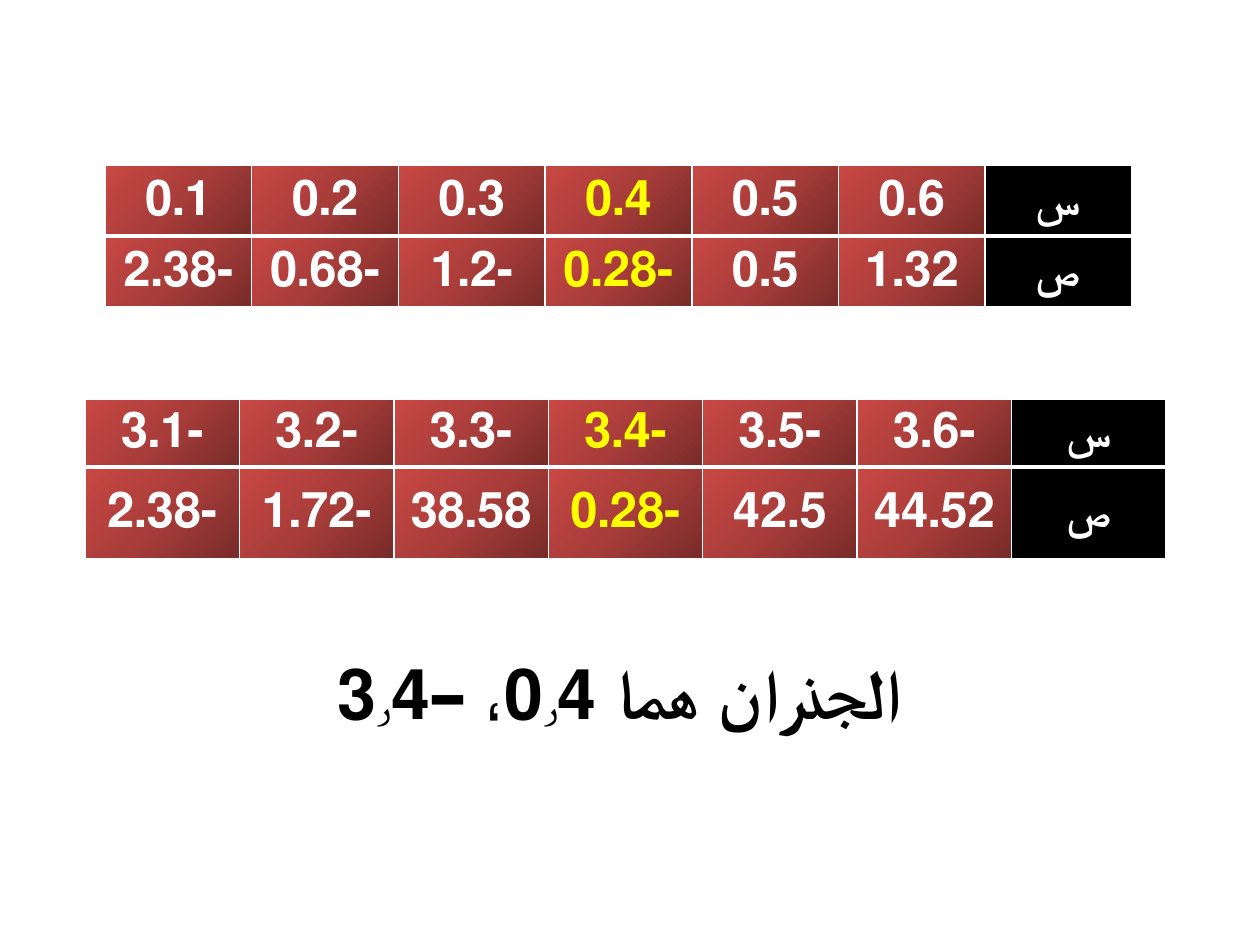
from lxml.etree import SubElement
from pptx import Presentation
from pptx.dml.color import RGBColor
from pptx.enum.text import MSO_ANCHOR, PP_ALIGN
from pptx.oxml.ns import qn
from pptx.util import Pt

PX = 914400 // 126
FONT = "Arial"
COLORS = {
    "text": "000000", "label": "000000", "value": "FFFFFF", "root": "FFFF00",
    "border": "FFFFFF", "dark": "772B29", "middle": "A93D3A", "light": "C94844",
}

# Content: values of x and y around each root, label in the last column
ROOT_COLUMN = 3
TABLES = [
    {"box": (105, 165, 1027), "row_heights": (71, 71), "inset": 6, "rows": [
        ("0.1", "0.2", "0.3", "0.4", "0.5", "0.6", "س"),
        ("-2.38", "-0.68", "-1.2", "-0.28", "0.5", "1.32", "ص"),
    ]},
    {"box": (85, 399, 1081), "row_heights": (68, 92), "inset": 5, "rows": [
        ("-3.1", "-3.2", "-3.3", "-3.4", "-3.5", "-3.6", "س"),
        ("-2.38", "-1.72", "38.58", "-0.28", "42.5", "44.52", "ص"),
    ]},
]
CONCLUSION = ["الجذران هما 0", "٫", "4، –3", "٫", "4"]
CONCLUSION_BOX = (164, 643, 912, 97)


def rgb(name):
    return RGBColor.from_string(COLORS[name])


def style(paragraph, size, color):
    paragraph.alignment = PP_ALIGN.CENTER
    paragraph._p.get_or_add_pPr().set("rtl", "1")
    font = paragraph.font
    font.name, font.size, font.bold = FONT, Pt(size), True
    font.color.rgb = rgb(color)


def add_color(parent, name):
    SubElement(parent, qn("a:srgbClr"), val=COLORS[name])


def add_border(properties, side, points):
    line = SubElement(properties, qn(f"a:ln{side}"), w=str(Pt(points)))
    add_color(SubElement(line, qn("a:solidFill")), "border")


def add_radial_fill(properties):
    gradient = SubElement(properties, qn("a:gradFill"), rotWithShape="1")
    stops = SubElement(gradient, qn("a:gsLst"))
    for position, name in ((0, "dark"), (50, "middle"), (100, "light")):
        add_color(SubElement(stops, qn("a:gs"), pos=str(position * 1000)), name)
    path = SubElement(gradient, qn("a:path"), path="circle")
    SubElement(path, qn("a:fillToRect"), l="100000", t="100000")


def add_value_table(slide, box, row_heights, inset, rows):
    left, top, width = box
    columns = len(rows[0])
    frame = slide.shapes.add_table(len(rows), columns, left * PX, top * PX,
                                   width * PX, sum(row_heights) * PX)
    table = frame.table
    table.first_row = table.horz_banding = False
    for column in table.columns:
        column.width = width * PX // columns
    for row, height in zip(table.rows, row_heights):
        row.height = height * PX

    for r, values in enumerate(rows):
        # The line between the two rows is thicker
        borders = {"L": 1, "R": 1, "T": 3 if r else 1, "B": 1 if r else 3}
        for c, value in enumerate(values):
            cell = table.cell(r, c)
            cell.text = value
            cell.vertical_anchor = MSO_ANCHOR.MIDDLE
            cell.margin_left = cell.margin_right = 13 * PX
            cell.margin_top = cell.margin_bottom = inset * PX
            style(cell.text_frame.paragraphs[0], 28,
                  "root" if c == ROOT_COLUMN else "value")
            properties = cell._tc.get_or_add_tcPr()
            for side, points in borders.items():
                add_border(properties, side, points)
            if c == columns - 1:
                cell.fill.solid()
                cell.fill.fore_color.rgb = rgb("label")
            else:
                add_radial_fill(properties)


def main():
    deck = Presentation()
    deck.slide_width, deck.slide_height = 1260 * PX, 945 * PX
    slide = deck.slides.add_slide(deck.slide_layouts[6])

    # Value tables
    for table in TABLES:
        add_value_table(slide, **table)

    # Conclusion, with light decimal separators
    conclusion = slide.shapes.add_textbox(*(n * PX for n in CONCLUSION_BOX))
    conclusion.text_frame.word_wrap = True
    paragraph = conclusion.text_frame.paragraphs[0]
    style(paragraph, 40, "text")
    for part in CONCLUSION:
        run = paragraph.add_run()
        run.text = part
        if part == "٫":
            run.font.bold = False

    deck.save("out.pptx")


if __name__ == "__main__":
    main()
